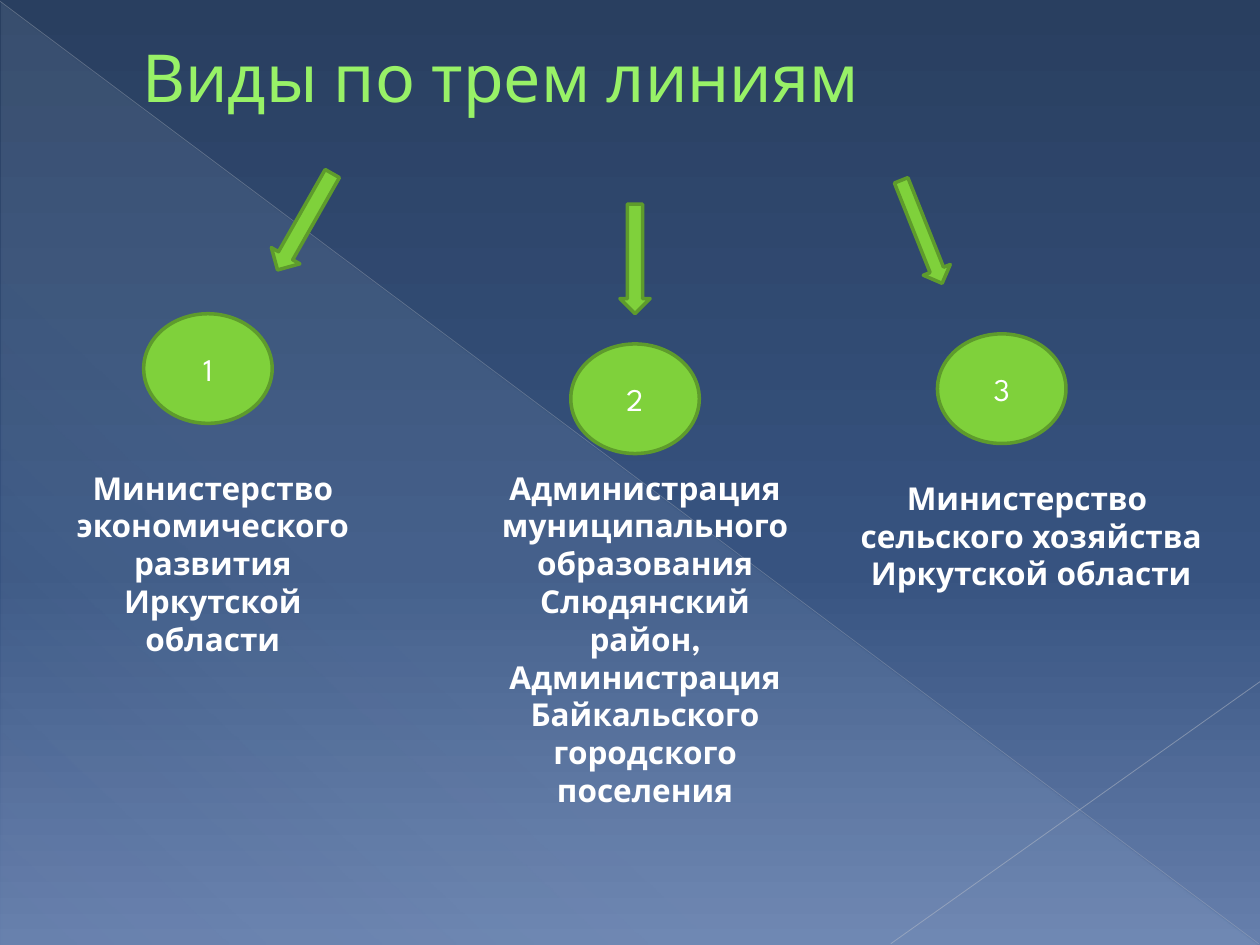
from lxml import etree
from pptx import Presentation
from pptx.dml.color import RGBColor
from pptx.enum.shapes import MSO_CONNECTOR, MSO_SHAPE
from pptx.enum.text import MSO_ANCHOR, MSO_AUTO_SIZE, PP_ALIGN
from pptx.oxml.ns import qn
from pptx.util import Inches, Pt

STRAIGHT = MSO_CONNECTOR.STRAIGHT
TRIANGLE, ARROW, OVAL = MSO_SHAPE.RIGHT_TRIANGLE, MSO_SHAPE.DOWN_ARROW, MSO_SHAPE.OVAL
MIDDLE, TOP = MSO_ANCHOR.MIDDLE, MSO_ANCHOR.TOP
LEFT, CENTER = PP_ALIGN.LEFT, PP_ALIGN.CENTER
GROW, FIXED = MSO_AUTO_SIZE.SHAPE_TO_FIT_TEXT, MSO_AUTO_SIZE.NONE

COLUMNS, ROWS = 100, 75
WIDTH, HEIGHT = Inches(10), Inches(7.5)


def rgb(hex_code):
    """Turn a hex string into a colour."""
    return RGBColor.from_string(hex_code)


def set_format(target, values):
    """Set every attribute named in a dict of format values."""
    for name, value in values.items():
        setattr(target, name, value)


def add_alpha(color, opacity):
    """Make a colour element translucent by a percentage of opacity."""
    etree.SubElement(color, qn("a:alpha"), val=str(opacity * 1000))


class Deck:
    """Holds the style and the current slide."""

    font = "League Spartan"
    white, lime, green, dark_green = "FFFFFF", "98F167", "7FD13B", "5E9B2C"
    title_outline = "589129"

    def __init__(self, presentation):
        """Add a blank slide on a grid of columns and rows."""
        set_format(presentation, {"slide_width": WIDTH, "slide_height": HEIGHT})
        self.slide = presentation.slides.add_slide(presentation.slide_layouts[6])
        self.shapes = self.slide.shapes

    def place(self, columns, rows):
        """Convert grid units into lengths."""
        return int(WIDTH * columns / COLUMNS), int(HEIGHT * rows / ROWS)

    def gradient(self, owner, fill, stops, angle):
        """Give an element a linear gradient with a clockwise angle."""
        fill.gradient()
        fill.gradient_angle = 360 - angle
        stop_list = owner.element.find(".//" + qn("a:gsLst"))
        for old_stop in list(stop_list):
            stop_list.remove(old_stop)
        for position, hex_code, opacity in stops:
            stop = etree.SubElement(stop_list, qn("a:gs"), pos=str(position * 1000))
            add_alpha(etree.SubElement(stop, qn("a:srgbClr"), val=hex_code), opacity)

    def backdrop(self, stops, angle):
        """Fill the slide background."""
        self.gradient(self.slide, self.slide.background.fill, stops, angle)

    def shape(self, kind, left, top, width, height, rotation=0):
        """Add a green outlined shape."""
        shape = self.shapes.add_shape(kind, *self.place(left, top), *self.place(width, height))
        shape.shadow.inherit = False
        shape.rotation = rotation
        shape.fill.solid()
        shape.fill.fore_color.rgb = rgb(self.green)
        shape.line.color.rgb = rgb(self.dark_green)
        shape.line.width = Pt(2)
        return shape

    def sheen(self, left, top, width, height, stops, angle):
        """Add a translucent triangle without an outline."""
        triangle = self.shape(TRIANGLE, left, top, width, height)
        triangle.line.fill.background()
        self.gradient(triangle, triangle.fill, stops, angle)

    def ray(self, start, end, hex_code, width, opacity):
        """Add a faint straight line."""
        ray = self.shapes.add_connector(STRAIGHT, *self.place(*start), *self.place(*end))
        ray.line.width = Pt(width)
        ray.line.color.rgb = rgb(hex_code)
        add_alpha(ray.element.find(".//" + qn("a:srgbClr")), opacity)
        etree.SubElement(ray.element.spPr, qn("a:effectLst"))

    def fill_text(self, holder, lines, size=18, bold=False, color=white,
                  align=CENTER, anchor=MIDDLE, autosize=FIXED):
        """Put one paragraph into a shape for each line of text."""
        frame = holder.text_frame
        set_format(frame, {"word_wrap": True, "auto_size": autosize, "vertical_anchor": anchor})
        frame.text = "\n".join(lines)
        for paragraph in frame.paragraphs:
            paragraph.alignment = align
            font = paragraph.runs[0].font
            set_format(font, {"name": self.font, "size": Pt(size), "bold": bold})
            font.color.rgb = rgb(color)

    def text(self, left, top, width, height, lines, **style):
        """Add a text box."""
        box = self.shapes.add_textbox(*self.place(left, top), *self.place(width, height))
        self.fill_text(box, lines, **style)
        return box

    def title(self, left, top, width, height, words):
        """Add the indented title with outlined letters."""
        box = self.text(left, top, width, height, [words], size=37.8,
                        color=self.lime, align=LEFT)
        box.element.find(".//" + qn("a:pPr")).set("marL", str(Inches(0.53)))
        outline = etree.Element(qn("a:ln"), w=str(Pt(0.5)))
        paint = etree.SubElement(outline, qn("a:solidFill"))
        etree.SubElement(paint, qn("a:srgbClr"), val=self.title_outline)
        box.element.find(".//" + qn("a:rPr")).insert(0, outline)

    def number(self, left, top, digit):
        """Add a numbered oval."""
        self.fill_text(self.shape(OVAL, left, top, 10.2, 8.7), [digit])


def main():
    """Build the slide about the three lines."""
    presentation = Presentation()
    deck = Deck(presentation)
    deck.backdrop([(0, "293F60", 100), (60, "375380", 100), (100, "667FAC", 100)], 90)
    deck.sheen(0.1, 0.2, 99.8, 74.8,
               [(0, "D6ECFF", 10), (70, "D6ECFF", 8), (100, "D6ECFF", 1)], 133)
    deck.ray((0, 0.1), (99.9, 74.9), "B7BCC5", 0.39, 35)
    deck.ray((100, 54.1), (70.7, 74.9), "BFC3CB", 0.47, 45)
    deck.title(5, 3, 90, 6.1, "Виды по трем линиям")

    arrows = [(22.9, 13.2, 2.6, 8.8, 29.6), (49.2, 16.2, 2.4, 8.7, 0), (72, 14, 2.3, 8.8, 338.3)]
    for arrow in arrows:
        deck.shape(ARROW, *arrow)

    authorities = [
        (5.1, 36.7, 23.6, 13.1, ["Министерство экономического развития Иркутской области"]),
        (66.5, 37.5, 30.7, 10.1, ["Министерство ", "сельского хозяйства Иркутской области"]),
        (37.4, 36.7, 27.6, 22.2, ["Администрация муниципального образования Слюдянский район,",
                                  "Администрация Байкальского городского поселения"]),
    ]
    for authority in authorities:
        deck.text(*authority, bold=True, anchor=TOP, autosize=GROW)

    for digit, (left, top) in enumerate([(11.4, 24.9), (45.3, 27.3), (74.4, 26.5)], 1):
        deck.number(left, top, str(digit))
    presentation.save("out.pptx")


if __name__ == "__main__":
    main()
